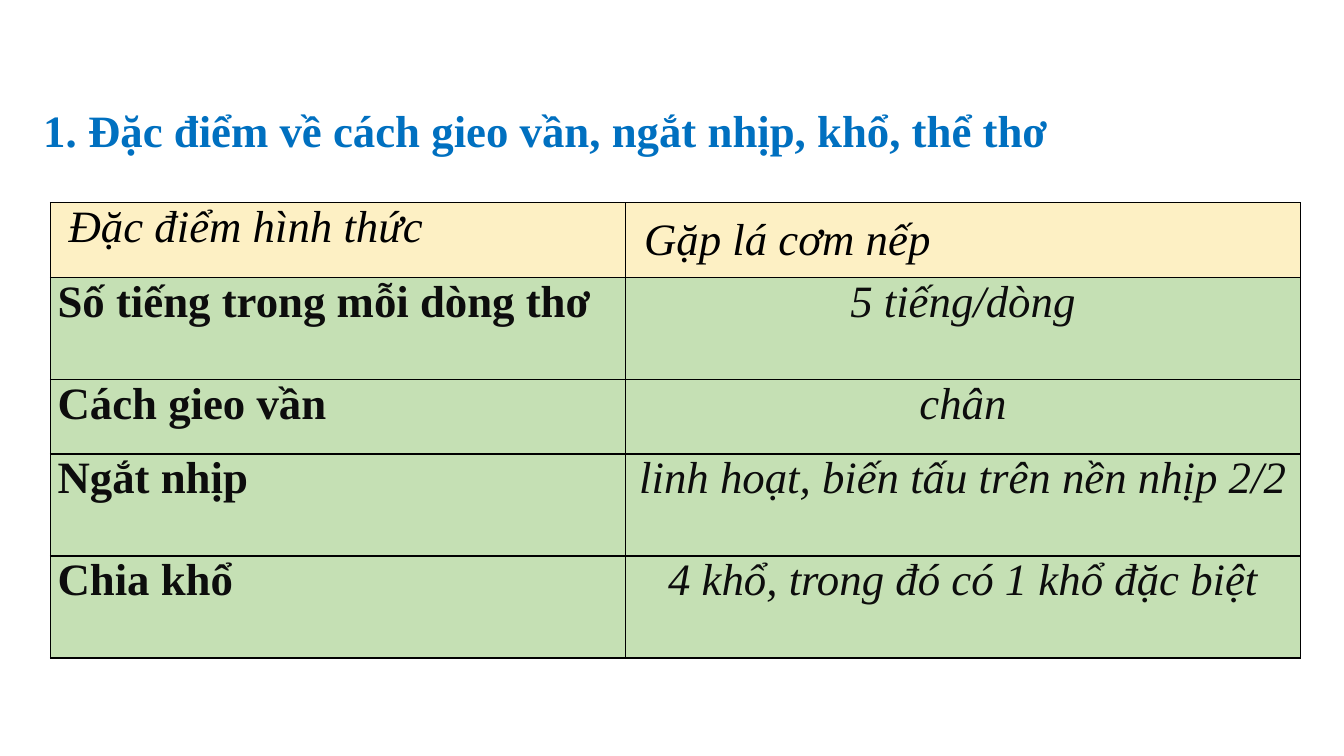
import pptx
import pptx.util
import pptx.dml.color
import pptx.enum.text
import pptx.oxml
import pptx.oxml.ns

Cm = pptx.util.Cm
ALIGN = pptx.enum.text.PP_ALIGN
ANCHOR = pptx.enum.text.MSO_ANCHOR

COLORS = {
    "title": "0070C0",
    "header_text": "000000",
    "body_text": "0D0D0D",
    "header_fill": "FDF0C4",
    "body_fill": "C5E0B4",
    "border": "000000",
}
FONT = "Times New Roman"
TITLE = "1. Đặc điểm về cách gieo vần, ngắt nhịp, khổ, thể thơ"
HEADERS = ["Đặc điểm hình thức", "Gặp lá cơm nếp"]
FEATURES = [
    ("Số tiếng trong mỗi dòng thơ", "5 tiếng/dòng"),
    ("Cách gieo vần", "chân"),
    ("Ngắt nhịp", "linh hoạt, biến tấu trên nền nhịp 2/2"),
    ("Chia khổ", "4 khổ, trong đó có 1 khổ đặc biệt"),
]
COLUMN_WIDTHS = [14.5, 17]
ROW_HEIGHTS = [1.88, 2.57, 1.88, 2.57, 2.57]


def rgb(name):
    return pptx.dml.color.RGBColor.from_string(COLORS[name])


def add_run(paragraph, text, color, bold=False, italic=False):
    run = paragraph.add_run()
    run.text = text
    run.font.name = FONT
    run.font.size = pptx.util.Pt(32)
    run.font.bold = bold
    run.font.italic = italic
    run.font.color.rgb = rgb(color)


def add_title(slide):
    title = slide.shapes.add_textbox(Cm(0.84), Cm(2.46), Cm(26.06), Cm(1.63))
    frame = title.text_frame
    frame.word_wrap = False
    frame.auto_size = pptx.enum.text.MSO_AUTO_SIZE.SHAPE_TO_FIT_TEXT
    paragraph = frame.paragraphs[0]
    paragraph.alignment = ALIGN.JUSTIFY
    add_run(paragraph, TITLE, "title", bold=True)


def add_borders(cell):
    properties = cell._tc.get_or_add_tcPr()
    for side in ("lnL", "lnR", "lnT", "lnB"):
        properties.append(pptx.oxml.parse_xml(
            f'<a:{side} {pptx.oxml.ns.nsdecls("a")} w="12700"><a:solidFill>'
            f'<a:srgbClr val="{COLORS["border"]}"/></a:solidFill></a:{side}>'))


def style_cell(cell, fill):
    add_borders(cell)
    cell.fill.solid()
    cell.fill.fore_color.rgb = rgb(fill)
    cell.margin_left = cell.margin_right = Cm(0.18)
    cell.margin_top = cell.margin_bottom = 0
    return cell.text_frame.paragraphs[0]


def add_header_cell(cell, text):
    paragraph = style_cell(cell, "header_fill")
    indent = paragraph._p.get_or_add_pPr()
    indent.set("marL", str(Cm(0.28)))
    indent.set("indent", "0")
    add_run(paragraph, text, "header_text", italic=True)


def add_feature_table(slide):
    table = slide.shapes.add_table(
        len(ROW_HEIGHTS), len(COLUMN_WIDTHS), Cm(1.27), Cm(5.11),
        Cm(sum(COLUMN_WIDTHS)), Cm(sum(ROW_HEIGHTS))).table
    for column, width in zip(table.columns, COLUMN_WIDTHS):
        column.width = Cm(width)
    for row, height in zip(table.rows, ROW_HEIGHTS):
        row.height = Cm(height)
    for index, header in enumerate(HEADERS):
        add_header_cell(table.cell(0, index), header)
    table.cell(0, 1).vertical_anchor = ANCHOR.MIDDLE
    for index, (feature, value) in enumerate(FEATURES, start=1):
        label = style_cell(table.cell(index, 0), "body_fill")
        add_run(label, feature, "body_text", bold=True)
        answer = style_cell(table.cell(index, 1), "body_fill")
        answer.alignment = ALIGN.CENTER
        add_run(answer, value, "body_text", italic=True)


def main():
    presentation = pptx.Presentation()
    presentation.slide_width = Cm(33.87)
    presentation.slide_height = Cm(19.05)
    slide = presentation.slides.add_slide(presentation.slide_layouts[6])
    add_title(slide)
    add_feature_table(slide)
    presentation.save("out.pptx")


if __name__ == "__main__":
    main()
